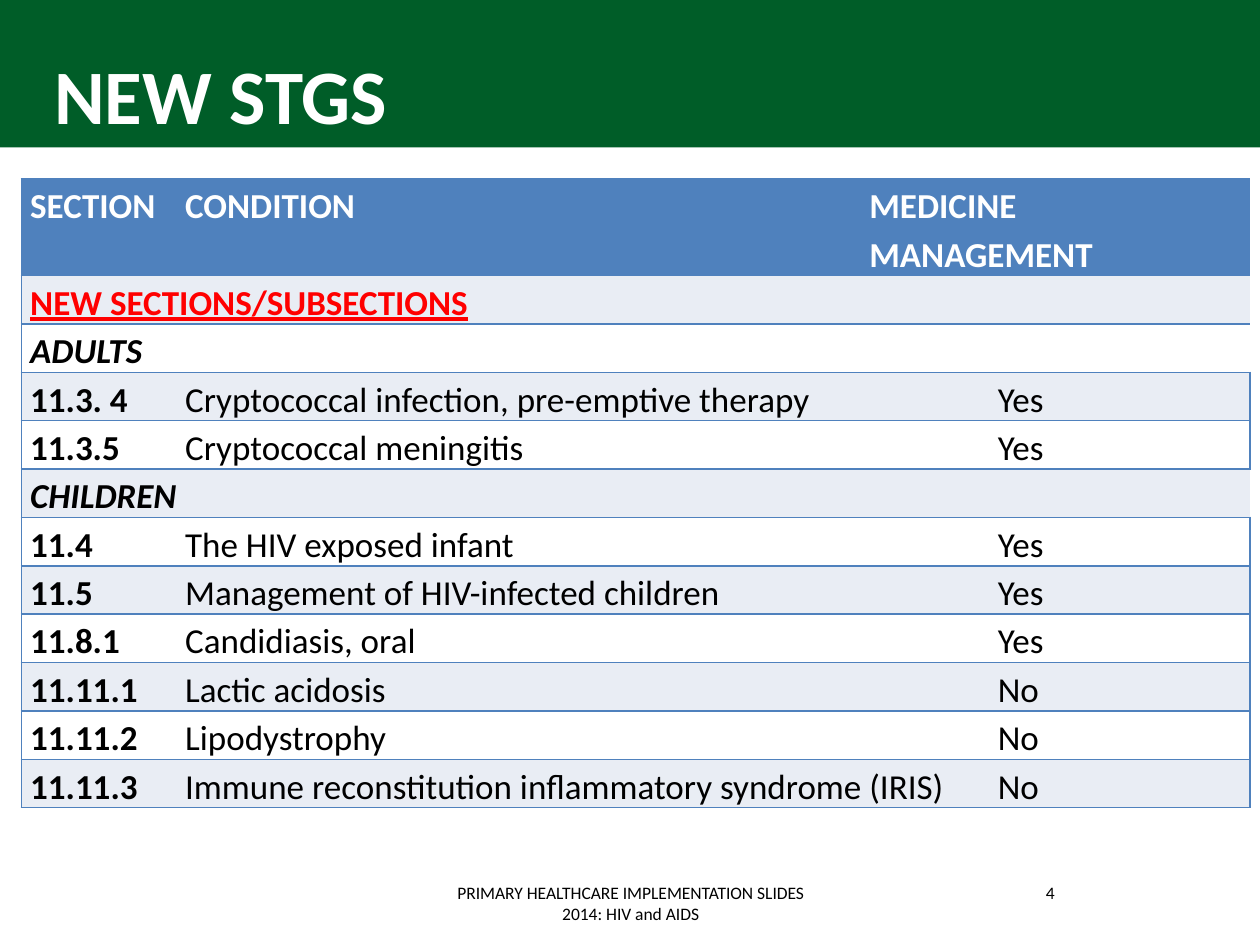
from lxml import etree
from pptx import Presentation
from pptx.dml.color import RGBColor
from pptx.enum.shapes import MSO_SHAPE
from pptx.enum.text import MSO_ANCHOR, PP_ALIGN
from pptx.oxml.ns import qn
from pptx.util import Inches, Pt

RECTANGLE = MSO_SHAPE.RECTANGLE
TOP = MSO_ANCHOR.TOP
LEFT, CENTER, JUSTIFY = PP_ALIGN.LEFT, PP_ALIGN.CENTER, PP_ALIGN.JUSTIFY

TITLE = "NEW STGS"
FOOTER = "PRIMARY HEALTHCARE IMPLEMENTATION SLIDES 2014: HIV and AIDS"
PAGE_NUMBER = "4"
ROWS = [
    ("header", "SECTION", "CONDITION", "MEDICINE MANAGEMENT"),
    ("heading", "NEW SECTIONS/SUBSECTIONS"),
    ("group", "ADULTS"),
    ("entry", "11.3. 4", "Cryptococcal infection, pre-emptive therapy", "Yes"),
    ("entry", "11.3.5", "Cryptococcal meningitis", "Yes"),
    ("group", "CHILDREN"),
    ("entry", "11.4", "The HIV exposed infant", "Yes"),
    ("entry", "11.5", "Management of HIV-infected children", "Yes"),
    ("entry", "11.8.1", "Candidiasis, oral", "Yes"),
    ("entry", "11.11.1", "Lactic acidosis", "No"),
    ("entry", "11.11.2", "Lipodystrophy", "No"),
    ("entry", "11.11.3", "Immune reconstitution inflammatory syndrome (IRIS)", "No"),
]
COLUMN_WIDTHS = [1.23, 5.43, 1.02, 2.07]
ROW_HEIGHT = 0.34
SPANS = {
    "header": [(0, 0), (1, 1), (2, 3)],
    "heading": [(0, 3)],
    "group": [(0, 3)],
    "entry": [(0, 0), (1, 2), (3, 3)],
}

THEME = {
    "font": "Calibri",
    "band": "005D28",
    "accent": "4F81BD",
    "stripes": ("FFFFFF", "E9EDF4"),
    "white": "FFFFFF",
    "black": "000000",
    "red": "FF0000",
    "title_size": 44,
    "table_size": 20,
    "footer_size": 10,
}
ROW_FORMATS = {
    "header": {"color": THEME["white"], "bold": True},
    "heading": {"color": THEME["red"], "bold": True, "underline": True},
    "group": {"color": THEME["black"], "bold": True, "italic": True},
    "entry": {"color": THEME["black"], "bold": False},
}


def write(frame, text, size, color, align, **formats):
    para = frame.paragraphs[0]
    para.alignment = align
    span = para.add_run()
    span.text = text
    values = {"name": THEME["font"], "size": Pt(size), "bold": False, **formats}
    for name, value in values.items():
        setattr(span.font, name, value)
    span.font.color.rgb = RGBColor.from_string(color)
    return para


def draw_borders(cell, column):
    properties = cell._tc.get_or_add_tcPr()
    last = len(COLUMN_WIDTHS) - 1
    visible = {"lnL": column == 0, "lnR": column == last, "lnT": True, "lnB": True}
    for side, shown in visible.items():
        line = etree.SubElement(properties, qn(f"a:{side}"), w=str(Pt(1)))
        if shown:
            fill = etree.SubElement(line, qn("a:solidFill"))
            etree.SubElement(fill, qn("a:srgbClr"), val=THEME["accent"])
        else:
            etree.SubElement(line, qn("a:noFill"))


def add_title(page):
    title = page.shapes.title
    title.left, title.top, title.width, title.height = map(Inches, (0.33, 0.3, 9, 1.24))
    frame = title.text_frame
    frame.vertical_anchor = TOP
    frame.margin_top = Inches(0.08)
    write(frame, TITLE, THEME["title_size"], THEME["white"], LEFT, bold=True)

    band = page.shapes.add_shape(RECTANGLE, 0, 0, Inches(10), Inches(1.17))
    band.shadow.inherit = False
    band.fill.solid()
    band.fill.fore_color.rgb = RGBColor.from_string(THEME["band"])
    band.line.fill.background()
    title.element.addprevious(band.element)


def add_footer(page, text, left, width):
    box = page.shapes.add_textbox(Inches(left), Inches(6.95), Inches(width), Inches(0.4))
    box.text_frame.word_wrap = True
    write(box.text_frame, text, THEME["footer_size"], THEME["black"], CENTER)


def add_sections_table(page):
    frame = page.shapes.add_table(
        len(ROWS), len(COLUMN_WIDTHS), Inches(0.17), Inches(1.42),
        Inches(sum(COLUMN_WIDTHS)), Inches(ROW_HEIGHT * len(ROWS)),
    )
    table = frame.table
    table.horz_banding = False
    for column, width in zip(table.columns, COLUMN_WIDTHS):
        column.width = Inches(width)

    for index, (kind, *texts) in enumerate(ROWS):
        table.rows[index].height = Inches(ROW_HEIGHT)
        fill = THEME["accent"] if kind == "header" else THEME["stripes"][index % 2]
        for column in range(len(COLUMN_WIDTHS)):
            cell = table.cell(index, column)
            draw_borders(cell, column)
            cell.fill.solid()
            cell.fill.fore_color.rgb = RGBColor.from_string(fill)
            cell.margin_left = cell.margin_right = Inches(0.07)
            cell.margin_top = cell.margin_bottom = 0
        for (first, last), text in zip(SPANS[kind], texts):
            cell = table.cell(index, first)
            if last > first:
                cell.merge(table.cell(index, last))
            formats = dict(ROW_FORMATS[kind])
            if first == 0:
                formats["bold"] = True
            para = write(cell.text_frame, text, THEME["table_size"], align=JUSTIFY, **formats)
            para.line_spacing = 1.15


def main():
    deck = Presentation()
    deck.slide_width, deck.slide_height = Inches(10), Inches(7.5)
    page = deck.slides.add_slide(deck.slide_layouts[5])
    add_title(page)
    add_footer(page, PAGE_NUMBER, 7.17, 2.33)
    add_footer(page, FOOTER, 3.42, 3.17)
    add_sections_table(page)
    deck.save("out.pptx")


if __name__ == "__main__":
    main()
